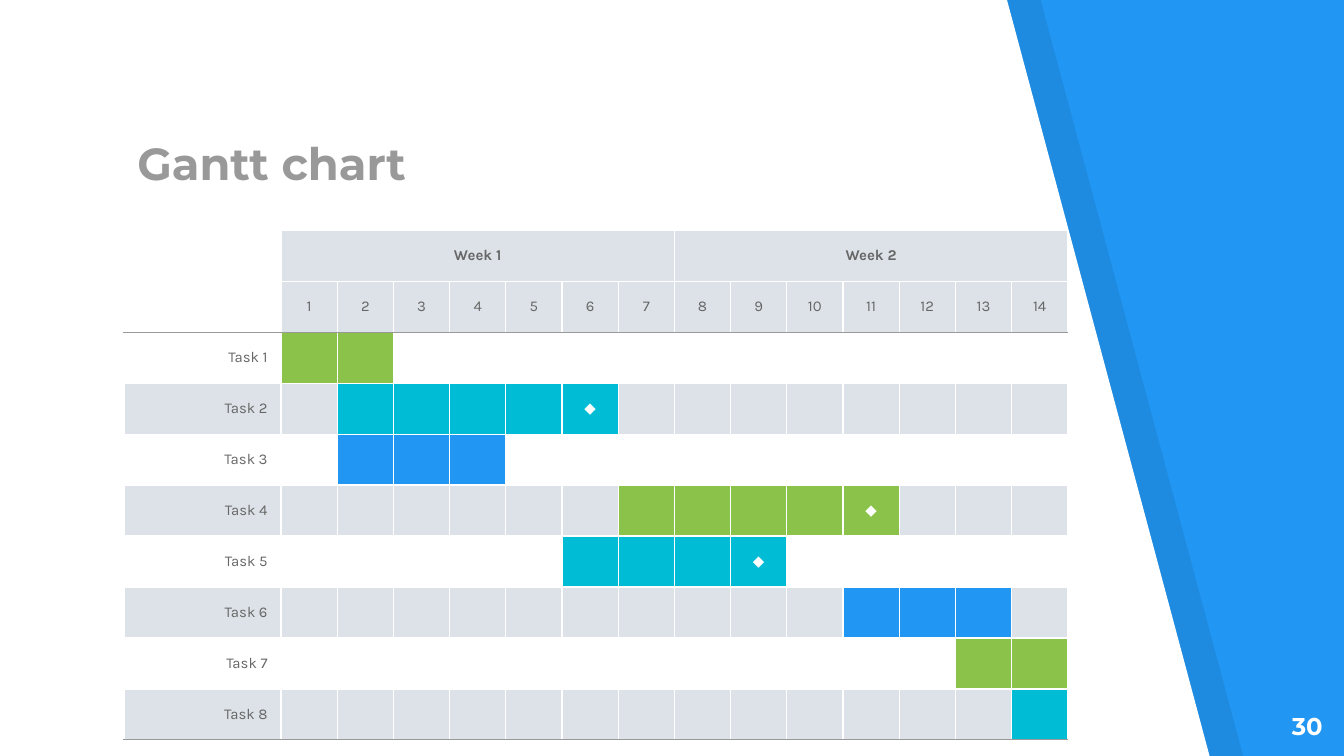
from lxml import etree
from pptx import Presentation
from pptx.dml.color import RGBColor
from pptx.enum.text import MSO_ANCHOR, MSO_AUTO_SIZE, PP_ALIGN
from pptx.oxml.ns import qn
from pptx.util import Pt

LEFT, CENTER, RIGHT = PP_ALIGN.LEFT, PP_ALIGN.CENTER, PP_ALIGN.RIGHT
TOP, MIDDLE, BOTTOM = MSO_ANCHOR.TOP, MSO_ANCHOR.MIDDLE, MSO_ANCHOR.BOTTOM
NO_AUTOFIT = MSO_AUTO_SIZE.NONE

# Content
TITLE = "Gantt chart"
PAGE = "30"
WEEKS = ["Week 1", "Week 2"]
DAYS_PER_WEEK = 7
DAYS = len(WEEKS) * DAYS_PER_WEEK
MILESTONE = "◆"
TASKS = [  # name, first day, last day, colour, ends in a milestone
    ("Task 1", 1, 2, "green", False),
    ("Task 2", 2, 6, "cyan", True),
    ("Task 3", 2, 4, "blue", False),
    ("Task 4", 7, 11, "green", True),
    ("Task 5", 6, 9, "cyan", True),
    ("Task 6", 11, 13, "blue", False),
    ("Task 7", 13, 14, "green", False),
    ("Task 8", 14, 14, "cyan", False),
]

THEME = {
    "blue": "2196F3", "cyan": "00BCD4", "green": "8BC34A",
    "band": "DCE2E7", "rule": "999999", "text": "666666",
    "white": "FFFFFF", "black": "000000",
    "head_font": "Montserrat", "body_font": "Karla",
    "title_size": 24, "page_size": 13, "cell_size": 8, "border": 0.75,
}

# Geometry in points
WIDTH, HEIGHT = 720, 405
PANEL_TOP, PANEL_BOTTOM, STRIPE = 539.5, 648, 18
TABLE_X, TABLE_Y = 66.4, 123.4
NAME_W, DAY_W, ROW_H = 84.2, 30.12, 27.32
HEADER_ROWS = 2


def color(name):
    return RGBColor.from_string(THEME[name])


def write(tf, text, font, size, fill, bold, align):
    p = tf.paragraphs[0]
    p.alignment = align
    r = p.add_run()
    r.text = text
    r.font.name = THEME[font]
    r.font.size = Pt(THEME[size])
    r.font.bold = bold
    r.font.color.rgb = color(fill)


def write_heading(sp, box, text, size, fill, align, anchor):
    sp.left, sp.top, sp.width, sp.height = map(Pt, box)
    tf = sp.text_frame
    tf.word_wrap = True
    tf.auto_size = NO_AUTOFIT
    tf.vertical_anchor = anchor
    tf.margin_left = tf.margin_top = tf.margin_right = tf.margin_bottom = Pt(7.2)
    write(tf, text, "head_font", size, fill, True, align)


def add_panel(s, x, fill, alpha=None):
    """Slanted panel that starts at x and runs the full slide height."""
    fb = s.shapes.build_freeform(Pt(x), 0)
    corners = [(x, HEIGHT), (x + PANEL_BOTTOM, HEIGHT), (x + PANEL_TOP, 0)]
    fb.add_line_segments([(Pt(a), Pt(b)) for a, b in corners], close=True)
    sp = fb.convert_to_shape()
    sp.shadow.inherit = False
    sp.line.fill.background()
    sp.fill.solid()
    sp.fill.fore_color.rgb = color(fill)
    if alpha is not None:
        clr = sp.fill._xPr.find(qn("a:solidFill"))[0]
        etree.SubElement(clr, qn("a:alpha"), val=str(alpha * 1000))


def set_borders(cell, top, bottom):
    tc_pr = cell._tc.get_or_add_tcPr()
    sides = [("L", "white"), ("R", "white"), ("T", top), ("B", bottom)]
    for i, (side, name) in enumerate(sides):
        ln = etree.Element(qn(f"a:ln{side}"), w=str(Pt(THEME["border"])))
        fill = etree.SubElement(ln, qn("a:solidFill"))
        etree.SubElement(fill, qn("a:srgbClr"), val=THEME[name])
        tc_pr.insert(i, ln)


def cell_content(row, col):
    """Return text, fill, text colour, bold and alignment of a cell."""
    if row < HEADER_ROWS:
        if col == 0:
            return "", None, "text", False, RIGHT
        if row == 1:
            return str(col), "band", "text", False, CENTER
        week, day = divmod(col - 1, DAYS_PER_WEEK)
        return ("" if day else WEEKS[week]), "band", "text", True, CENTER
    name, first, last, fill, milestone = TASKS[row - HEADER_ROWS]
    band = "band" if row % 2 else None
    if col == 0:
        return name, band, "text", False, RIGHT
    if first <= col <= last:
        mark = MILESTONE if milestone and col == last else ""
        return mark, fill, "white", False, CENTER
    return "", band, "text", False, CENTER


def add_gantt(s):
    rows, cols = HEADER_ROWS + len(TASKS), 1 + DAYS
    table = s.shapes.add_table(rows, cols, Pt(TABLE_X), Pt(TABLE_Y),
                               Pt(NAME_W + DAYS * DAY_W), Pt(rows * ROW_H)).table
    table.first_row = table.horz_banding = False
    for i, column in enumerate(table.columns):
        column.width = Pt(DAY_W if i else NAME_W)
    for row in table.rows:
        row.height = Pt(ROW_H)

    # Week headers span their days
    for week in range(len(WEEKS)):
        start = 1 + week * DAYS_PER_WEEK
        table.cell(0, start).merge(table.cell(0, start + DAYS_PER_WEEK - 1))

    ruled = (HEADER_ROWS - 1, rows - 1)  # rows with a grey line below
    for row in range(rows):
        for col in range(cols):
            cell = table.cell(row, col)
            text, fill, text_color, bold, align = cell_content(row, col)
            cell.vertical_anchor = MIDDLE
            cell.margin_left = cell.margin_right = Pt(7.2)
            cell.margin_top = cell.margin_bottom = Pt(3.6)
            if fill:
                cell.fill.solid()
                cell.fill.fore_color.rgb = color(fill)
            else:
                cell.fill.background()
            set_borders(cell, "rule" if row - 1 in ruled else "white",
                        "rule" if row in ruled else "white")
            if text:
                write(cell.text_frame, text, "body_font", "cell_size",
                      text_color, bold, align)
            else:  # keeps empty cells from stretching the row
                etree.SubElement(cell.text_frame.paragraphs[0]._p, qn("a:endParaRPr"),
                                 sz=str(THEME["cell_size"] * 100))


def main():
    prs = Presentation()
    prs.slide_width, prs.slide_height = Pt(WIDTH), Pt(HEIGHT)
    s = prs.slides.add_slide(prs.slide_layouts[5])

    # Background and slanted panels
    s.background.fill.solid()
    s.background.fill.fore_color.rgb = color("blue")
    add_panel(s, STRIPE, "black", alpha=7)
    add_panel(s, 0, "white")

    # Title, brought in front of the panels, and page number
    title = s.shapes.title
    s.shapes._spTree.append(title._element)
    write_heading(title, (66.4, 76.3, 378, 32.4), TITLE, "title_size", "rule",
                  LEFT, BOTTOM)
    box = (672.5, 373.7, 43.2, 31)
    write_heading(s.shapes.add_textbox(*map(Pt, box)), box, PAGE, "page_size",
                  "white", RIGHT, TOP)

    add_gantt(s)
    prs.save("out.pptx")


if __name__ == "__main__":
    main()
